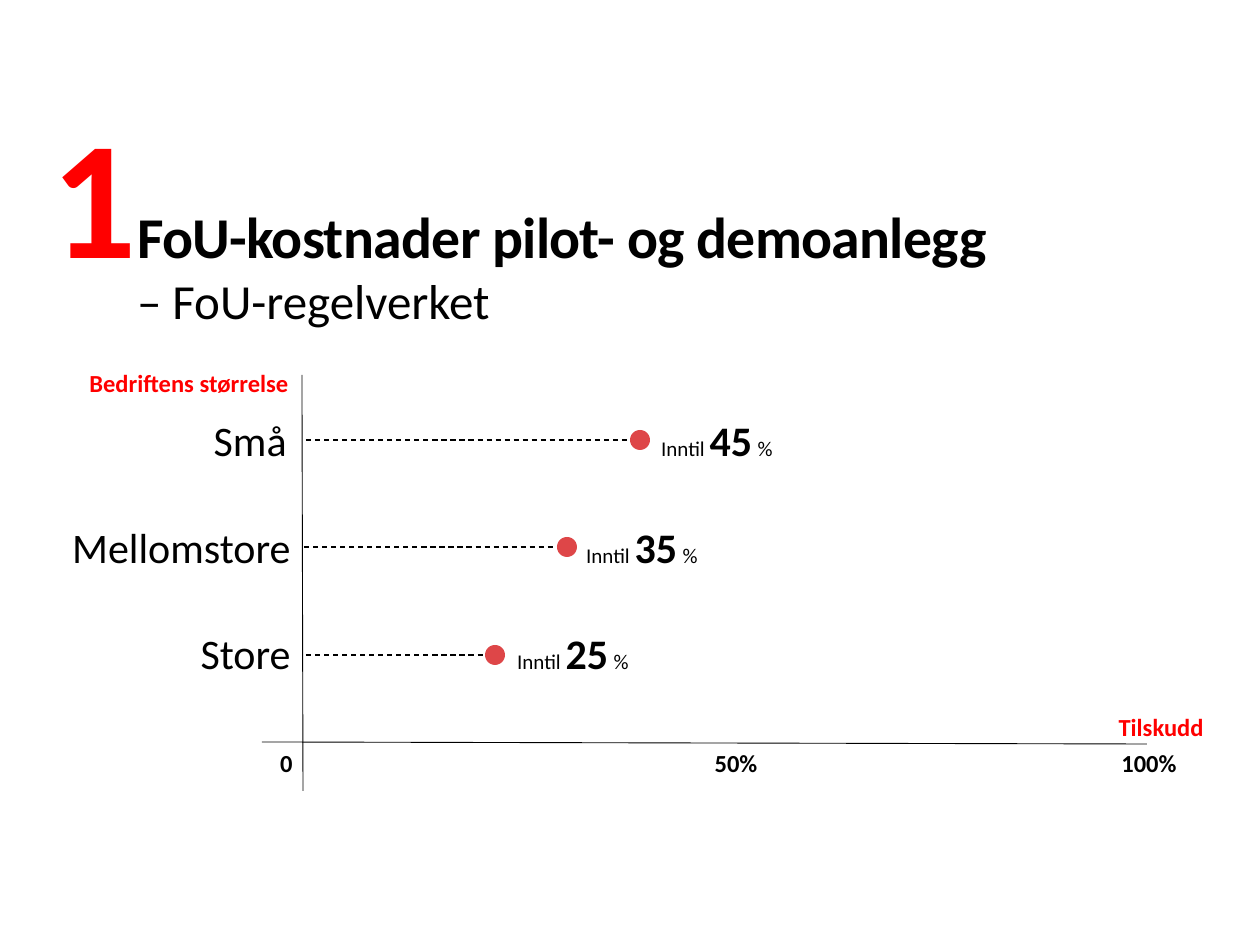
from lxml.etree import SubElement
from pptx import Presentation
from pptx.dml.color import RGBColor
from pptx.enum.dml import MSO_LINE
from pptx.enum.shapes import MSO_CONNECTOR, MSO_SHAPE
from pptx.enum.text import MSO_ANCHOR, MSO_AUTO_SIZE, PP_ALIGN
from pptx.oxml.ns import qn
from pptx.util import Pt

EMU_PER_PX = 914400 / 126
FONT = "Calibri"
COLORS = {"text": "000000", "accent": "FF0000", "dot": "DE4648"}
DOT_SIZE = 20
LEFT, CENTER, RIGHT = PP_ALIGN.LEFT, PP_ALIGN.CENTER, PP_ALIGN.RIGHT


def px(length):
    """Turn pixels into EMU."""
    return round(length * EMU_PER_PX)


def rgb(name):
    """Look up a named colour."""
    return RGBColor.from_string(COLORS[name])


def set_font(font, size, bold=False, color="text"):
    """Format a paragraph or run font."""
    font.name = FONT
    font.size = Pt(size)
    font.bold = bold
    font.color.rgb = rgb(color)


def add_textbox(slide, box, align, wrap=True):
    """Add an empty text box and return its paragraph."""
    frame = slide.shapes.add_textbox(*map(px, box)).text_frame
    frame.word_wrap = wrap
    frame.auto_size = MSO_AUTO_SIZE.SHAPE_TO_FIT_TEXT
    paragraph = frame.paragraphs[0]
    paragraph.alignment = align
    return paragraph


def add_label(slide, text, box, size, align=RIGHT, bold=False, color="text", wrap=True):
    """Add a text box with one uniform text."""
    label = add_textbox(slide, box, align, wrap)
    label.text = text
    set_font(label.font, size, bold, color)
    return label


def add_line(slide, start, end, width=0.5, dash=None):
    """Add a plain black line between two points."""
    line = slide.shapes.add_connector(MSO_CONNECTOR.STRAIGHT, *map(px, start + end))
    line.line.color.rgb = rgb("text")
    line.line.width = Pt(width)
    if dash:
        line.line.dash_style = dash
    SubElement(line._element.spPr, qn("a:effectLst"))


def add_dot(slide, left, top):
    """Add the round marker of one value."""
    dot = slide.shapes.add_shape(
        MSO_SHAPE.OVAL, px(left), px(top), px(DOT_SIZE), px(DOT_SIZE))
    dot.shadow.inherit = False
    dot.fill.solid()
    dot.fill.fore_color.rgb = rgb("dot")
    dot.line.fill.background()


def add_value(slide, percent, center, top):
    """Add the mixed-size text of one value."""
    width = 147
    value = add_textbox(slide, (center - width / 2, top, width, 63), CENTER)
    parts = [("Inntil ", 12, False), (str(percent), 24, True), (" ", 14, True), ("%", 12, False)]
    for text, size, bold in parts:
        run = value.add_run()
        run.text = text
        set_font(run.font, size, bold)


def add_size_row(slide, name, label_left, label_width, percent,
                 text_top, line_start, dot, value_center):
    """Add the label, dashed line, dot and value of one company size."""
    dot_left, dot_top = dot
    add_label(slide, name, (label_left, text_top, label_width, 63), 24)
    middle = dot_top + DOT_SIZE / 2
    add_line(slide, (line_start, middle), (dot_left, middle), 0.75, MSO_LINE.DASH)
    add_dot(slide, dot_left, dot_top)
    add_value(slide, percent, value_center, text_top)


def fill_title(title):
    """Place the title and write its heading and subheading."""
    title.left, title.top, title.width, title.height = map(px, (137, 181, 1138, 148))
    frame = title.text_frame
    frame.margin_left = frame.margin_top = frame.margin_right = frame.margin_bottom = 0
    frame.vertical_anchor = MSO_ANCHOR.BOTTOM
    frame.auto_size = MSO_AUTO_SIZE.NONE
    paragraph = frame.paragraphs[0]
    paragraph.alignment = LEFT
    heading = paragraph.add_run()
    heading.text = "FoU-kostnader pilot- og demoanlegg"
    set_font(heading.font, 33, True)
    heading.font._element.set("spc", "-40")
    paragraph.add_line_break()
    subheading = paragraph.add_run()
    subheading.text = "– FoU-regelverket"
    set_font(subheading.font, 28)


def add_axes(slide):
    """Add both axes with their names and scale."""
    add_line(slide, (303, 791), (302, 375))
    add_line(slide, (262, 742), (1147, 744))
    size_name = add_label(slide, "Bedriftens størrelse", (68, 368, 233, 37), 14,
                          bold=True, color="accent")
    size_name.line_spacing = 0.8
    add_label(slide, "Tilskudd", (1046, 706, 170, 43), 14, bold=True, color="accent")
    for text, left, align in [("0", 203, RIGHT), ("50%", 685, CENTER), ("100%", 1087, RIGHT)]:
        add_label(slide, text, (left, 742, 102, 43), 14, align, bold=True)


def main():
    """Build the slide and save it."""
    presentation = Presentation()
    presentation.slide_width, presentation.slide_height = px(1260), px(945)
    slide = presentation.slides.add_slide(presentation.slide_layouts[5])
    fill_title(slide.shapes.title)
    add_label(slide, "1", (39, 84, 111, 217), 96, LEFT, True, "accent", wrap=False)
    add_axes(slide)
    size_rows = [
        ("Små", 194, 105, 45, 408, 306, (630, 430), 717),
        ("Mellomstore", 55, 248, 35, 515, 304, (557, 537), 642),
        ("Store", 183, 120, 25, 621, 306, (485, 645), 573),
    ]
    for row in size_rows:
        add_size_row(slide, *row)
    presentation.save("out.pptx")


if __name__ == "__main__":
    main()
